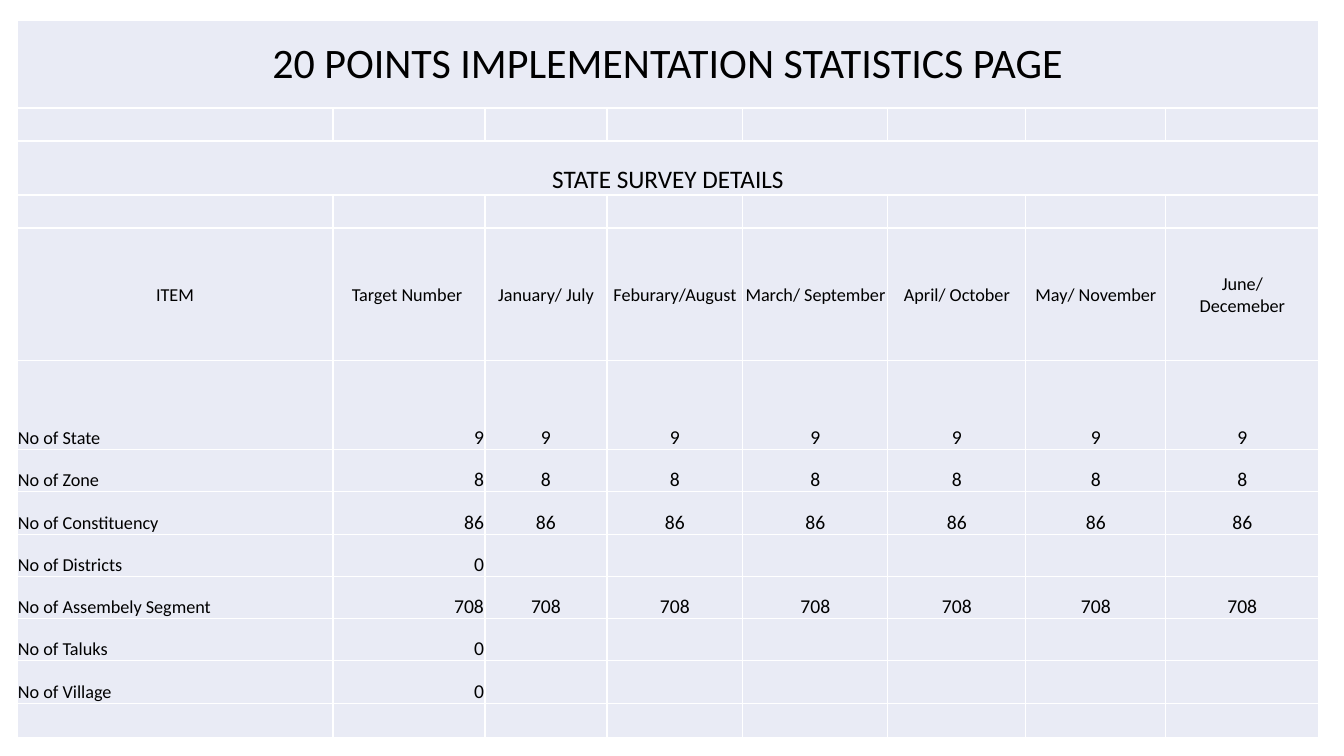
from lxml import etree
from pptx import Presentation
from pptx import util as u
from pptx.dml.color import RGBColor
from pptx.enum import text
from pptx.oxml import ns

PX = 914400 / 100.8
BLACK = RGBColor(0x00, 0x00, 0x00)
WHITE = RGBColor(0xFF, 0xFF, 0xFF)
PALE_BLUE = RGBColor(0xE9, 0xEB, 0xF5)

LEFT, CENTER, RIGHT = text.PP_ALIGN.LEFT, text.PP_ALIGN.CENTER, text.PP_ALIGN.RIGHT
MIDDLE, BOTTOM = text.MSO_ANCHOR.MIDDLE, text.MSO_ANCHOR.BOTTOM

COLUMN_WIDTHS = [316, 152, 122, 136, 145, 138, 140, 153]
ROW_HEIGHTS = [88, 33, 54, 33, 133, 89, 42, 43, 42, 42, 42, 43, 34]
TITLE_ROW, SUBTITLE_ROW, HEADER_ROW, FIRST_ITEM_ROW = 0, 2, 4, 5
HEADERS = ["ITEM", "Target Number ", "January/ July", "Feburary/August",
           "March/ September", "April/ October", "May/ November",
           "June/\vDecemeber"]
# Item, target, value repeated in every month column
ITEMS = [("No of State", "9", "9"),
         ("No of Zone", "8", "8"),
         ("No of Constituency", "86", "86"),
         ("No of Districts", "0", ""),
         ("No of Assembely Segment", "708", "708"),
         ("No of Taluks", "0", ""),
         ("No of Village", "0", "")]


def px(length):
    return u.Emu(round(length * PX))


def write(cell, words, size, align, anchor):
    cell.text = words
    cell.vertical_anchor = anchor
    paragraph = cell.text_frame.paragraphs[0]
    paragraph.alignment = align
    paragraph.font.name = "Calibri"
    paragraph.font.size = u.Pt(size)
    paragraph.font.color.rgb = BLACK


presentation = Presentation()
presentation.slide_width = px(1344)
presentation.slide_height = px(756)
slide = presentation.slides.add_slide(presentation.slide_layouts[6])

# Table grid
table = slide.shapes.add_table(
    len(ROW_HEIGHTS), len(COLUMN_WIDTHS), px(17), px(20),
    px(sum(COLUMN_WIDTHS)), px(sum(ROW_HEIGHTS))).table
table.first_row = False
table.horz_banding = False
for column, width in zip(table.columns, COLUMN_WIDTHS):
    column.width = px(width)
for row, height in zip(table.rows, ROW_HEIGHTS):
    row.height = px(height)

# Cell margins, white borders and fill
for cell in table.iter_cells():
    cell.margin_left = cell.margin_right = cell.margin_top = px(1)
    cell.margin_bottom = 0
    properties = cell._tc.get_or_add_tcPr()
    for side in ("a:lnL", "a:lnR", "a:lnT", "a:lnB"):
        line = etree.SubElement(properties, ns.qn(side), w=str(u.Pt(1)))
        fill = etree.SubElement(line, ns.qn("a:solidFill"))
        etree.SubElement(fill, ns.qn("a:srgbClr"), val=str(WHITE))
    cell.fill.solid()
    cell.fill.fore_color.rgb = PALE_BLUE

# Title and subtitle across all columns
last_column = len(COLUMN_WIDTHS) - 1
for row, words, size, anchor in [
        (TITLE_ROW, "20 POINTS IMPLEMENTATION STATISTICS PAGE", 30, MIDDLE),
        (SUBTITLE_ROW, "STATE SURVEY DETAILS", 18, BOTTOM)]:
    table.cell(row, 0).merge(table.cell(row, last_column))
    write(table.cell(row, 0), words, size, CENTER, anchor)

# Column headers
for column, header in enumerate(HEADERS):
    write(table.cell(HEADER_ROW, column), header, 13, CENTER, MIDDLE)

# Survey items
for row, (item, target, monthly) in enumerate(ITEMS, FIRST_ITEM_ROW):
    write(table.cell(row, 0), item, 13, LEFT, BOTTOM)
    write(table.cell(row, 1), target, 14, RIGHT, BOTTOM)
    if monthly:
        for column in range(2, len(COLUMN_WIDTHS)):
            write(table.cell(row, column), monthly, 14, CENTER, BOTTOM)

presentation.save("out.pptx")
